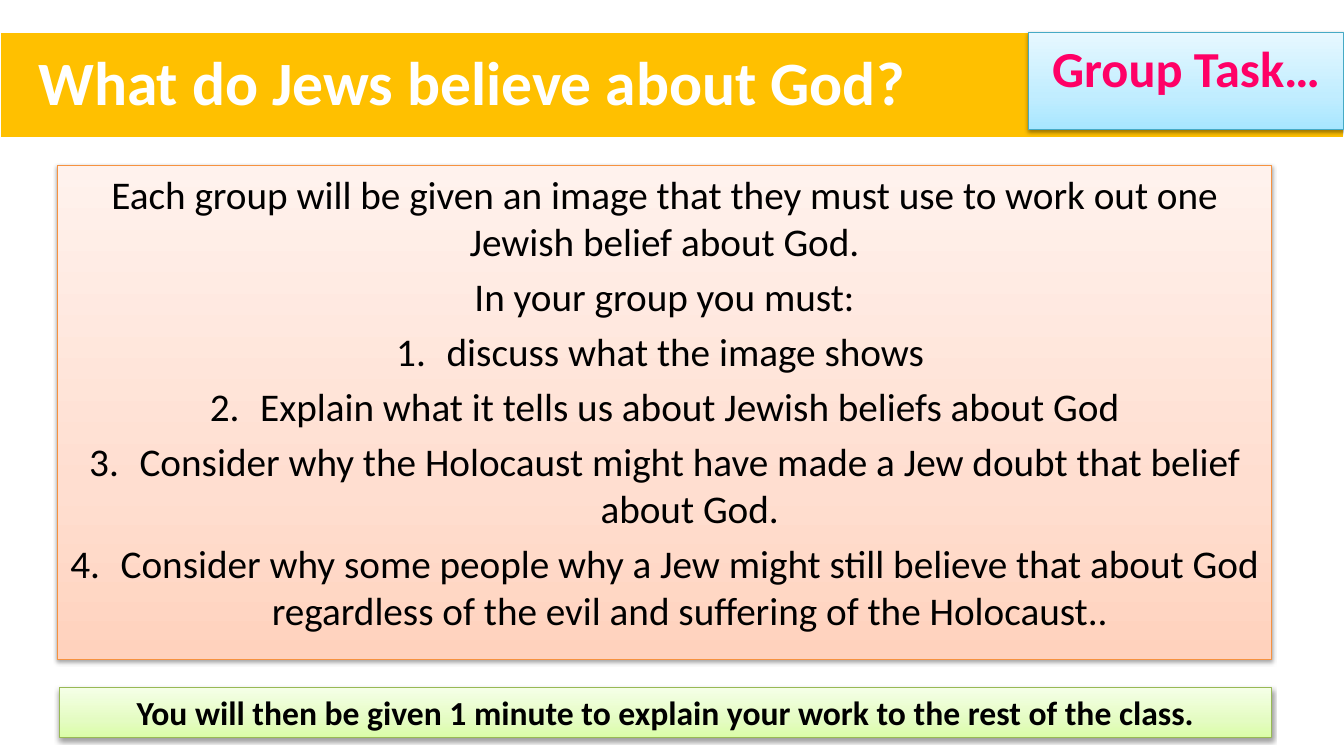
"""Builds the group task slide about Jewish beliefs about God."""
from copy import deepcopy
from dataclasses import dataclass

from lxml import etree
from pptx import Presentation
from pptx.dml.color import RGBColor
from pptx.enum.shapes import MSO_SHAPE
from pptx.enum.text import MSO_ANCHOR, MSO_AUTO_SIZE, PP_ALIGN
from pptx.oxml.ns import qn
from pptx.util import Inches, Pt

RECTANGLE = MSO_SHAPE.RECTANGLE
TOP, MIDDLE = MSO_ANCHOR.TOP, MSO_ANCHOR.MIDDLE
LEFT, CENTER = PP_ALIGN.LEFT, PP_ALIGN.CENTER
NO_FIT, GROW = MSO_AUTO_SIZE.NONE, MSO_AUTO_SIZE.SHAPE_TO_FIT_TEXT

WIDTH, HEIGHT = Inches(13.33), Inches(7.5)
FONT = "Calibri"
STOP_POSITIONS = (0, 0.35, 1)
HANGING = Inches(0.5)

BLACK = RGBColor(0x00, 0x00, 0x00)
WHITE = RGBColor(0xFF, 0xFF, 0xFF)
PINK = RGBColor(0xFF, 0x00, 0x66)
AMBER = RGBColor(0xFF, 0xC0, 0x00)
ORANGE = RGBColor(0xF6, 0x92, 0x40)
GREEN = RGBColor(0x98, 0xB9, 0x55)
TEAL = RGBColor(0x46, 0xAA, 0xC5)
PEACHES = (RGBColor(0xFF, 0xD2, 0xBD), RGBColor(0xFF, 0xDE, 0xD0), RGBColor(0xFF, 0xF2, 0xED))
LIMES = (RGBColor(0xDA, 0xFD, 0xA7), RGBColor(0xE4, 0xFC, 0xC2), RGBColor(0xF5, 0xFF, 0xE7))
SKIES = (RGBColor(0xA7, 0xE6, 0xFF), RGBColor(0xC1, 0xED, 0xFF), RGBColor(0xE7, 0xF8, 0xFF))


@dataclass(frozen=True)
class Line:
    """One paragraph of a panel."""
    text: str
    numbered: bool = False


@dataclass(frozen=True)
class Panel:
    """A filled rectangle placed by percentages of the slide's size."""
    left: float
    top: float
    width: float
    height: float
    fills: tuple[RGBColor, ...]
    outline: RGBColor
    lines: tuple[Line, ...]
    size: int
    color: RGBColor = BLACK
    bold: bool = True
    outline_width: float = 0.75
    align: PP_ALIGN = CENTER
    anchor: MSO_ANCHOR = TOP
    fit: MSO_AUTO_SIZE = NO_FIT
    inset: float = 0.1
    space_before: float = 0
    line_spacing: float = 1


PANELS = (
    Panel(4.28, 21.87, 90.32, 65.33, PEACHES, ORANGE, (
        Line("Each group will be given an image that they must use to work out one "
             "Jewish belief about God."),
        Line("In your group you must:"),
        Line("discuss what the image shows ", True),
        Line("Explain what it tells us about Jewish beliefs about God", True),
        Line("Consider why the Holocaust might have made a Jew doubt that belief about God.", True),
        Line("Consider why some people why a Jew might still believe that about God "
             "regardless of the evil and suffering of the Holocaust..", True),
    ), 28, bold=False, space_before=5.6),
    Panel(4.43, 90.93, 90.17, 6.67, LIMES, GREEN, (
        Line("You will then be given 1 minute to explain your work to the rest of the class."),
    ), 24, fit=GROW),
    Panel(0, 4.27, 100, 14, (AMBER,), WHITE, (
        Line("What do Jews believe about God?"),
    ), 44, WHITE, outline_width=1.5, align=LEFT, anchor=MIDDLE, inset=0.38, line_spacing=0.9),
    Panel(76.52, 4.27, 23.48, 12.93, SKIES, TEAL, (Line("Group Task…"),), 36, PINK),
)


def paint_gradient(box, colors: tuple[RGBColor, ...]) -> None:
    """Fill a box with three stops running from bottom to top."""
    box.fill.gradient()
    box.fill.gradient_angle = 90
    stop_list = box._element.spPr.find(qn("a:gradFill")).find(qn("a:gsLst"))
    stop_list.append(deepcopy(stop_list[0]))
    for stop, position, color in zip(box.fill.gradient_stops, STOP_POSITIONS, colors):
        stop.position = position
        stop.color.rgb = color


def cast_shadow(box) -> None:
    """Give a box a soft shadow straight below it."""
    effects = box._element.spPr.find(qn("a:effectLst"))
    shadow = etree.SubElement(effects, qn("a:outerShdw"), blurRad=str(Pt(3.1)),
                              dist=str(Pt(1.6)), dir="5400000", rotWithShape="0")
    shade = etree.SubElement(shadow, qn("a:srgbClr"), val=str(BLACK))
    etree.SubElement(shade, qn("a:alpha"), val="38000")


def number_paragraph(para) -> None:
    """Number a paragraph with a hanging indent."""
    properties = para._p.get_or_add_pPr()
    properties.set("marL", str(HANGING))
    properties.set("indent", str(-HANGING))
    etree.SubElement(properties, qn("a:buAutoNum"), type="arabicPeriod")


def write_lines(box, panel: Panel) -> None:
    """Write the panel's paragraphs into its box."""
    frame = box.text_frame
    frame.word_wrap = True
    frame.auto_size = panel.fit
    frame.vertical_anchor = panel.anchor
    frame.margin_left = Inches(panel.inset)
    for index, line in enumerate(panel.lines):
        para = frame.add_paragraph() if index else frame.paragraphs[0]
        para.alignment = panel.align
        para.line_spacing = panel.line_spacing
        para.space_before = Pt(panel.space_before)
        if line.numbered:
            number_paragraph(para)
        span = para.add_run()
        span.text = line.text
        span.font.name = FONT
        span.font.size = Pt(panel.size)
        span.font.bold = panel.bold
        span.font.color.rgb = panel.color


def draw_panel(page, panel: Panel) -> None:
    """Draw one panel with its fill, outline and text."""
    box = page.shapes.add_shape(
        RECTANGLE, round(WIDTH * panel.left / 100), round(HEIGHT * panel.top / 100),
        round(WIDTH * panel.width / 100), round(HEIGHT * panel.height / 100))
    box.shadow.inherit = False
    if len(panel.fills) > 1:
        paint_gradient(box, panel.fills)
        cast_shadow(box)
    else:
        box.fill.solid()
        box.fill.fore_color.rgb = panel.fills[0]
    box.line.color.rgb = panel.outline
    box.line.width = Pt(panel.outline_width)
    write_lines(box, panel)


def main() -> None:
    """Build the deck and save it."""
    deck = Presentation()
    deck.slide_width, deck.slide_height = WIDTH, HEIGHT
    page = deck.slides.add_slide(deck.slide_layouts[6])
    for panel in PANELS:
        draw_panel(page, panel)
    deck.save("out.pptx")


if __name__ == "__main__":
    main()
